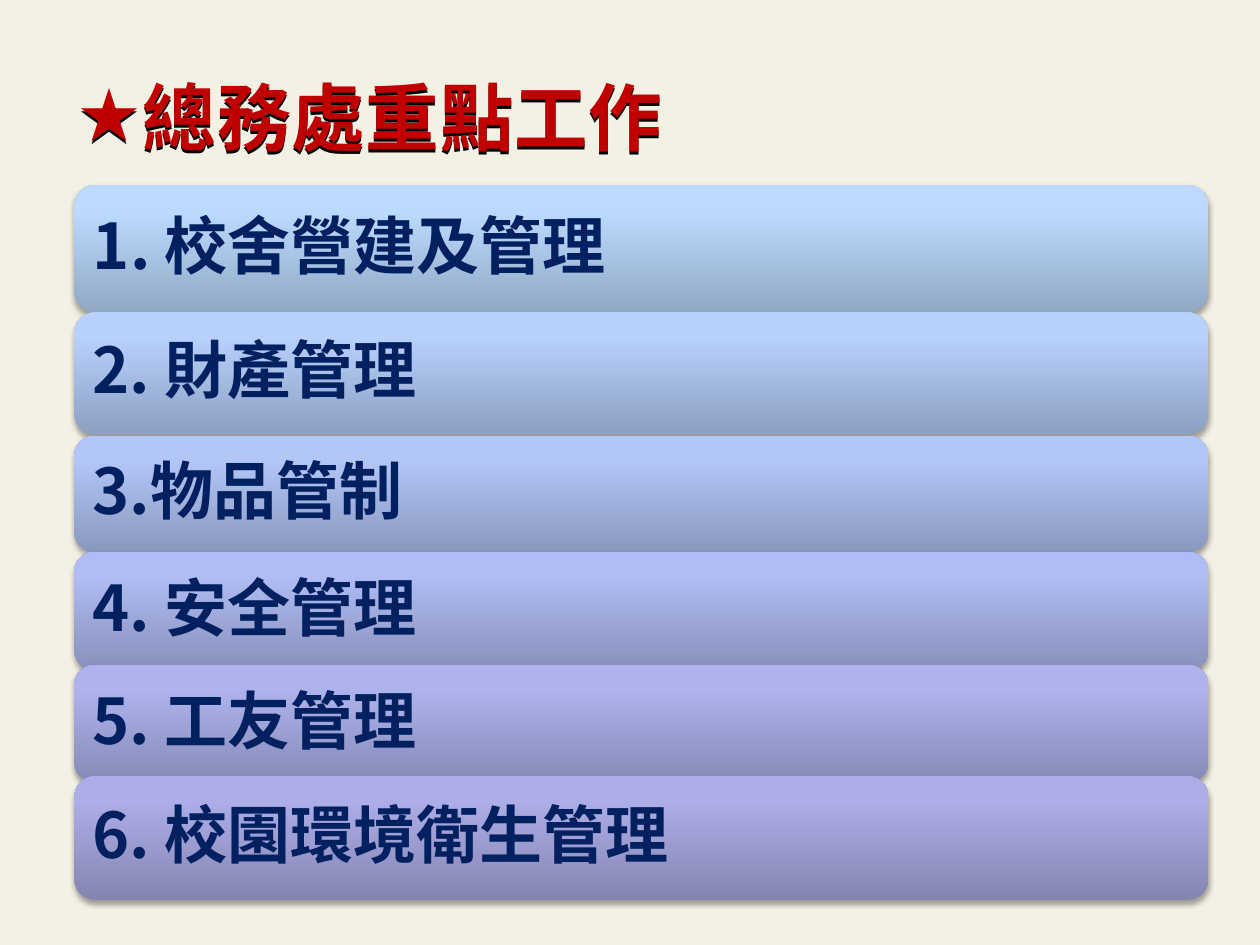
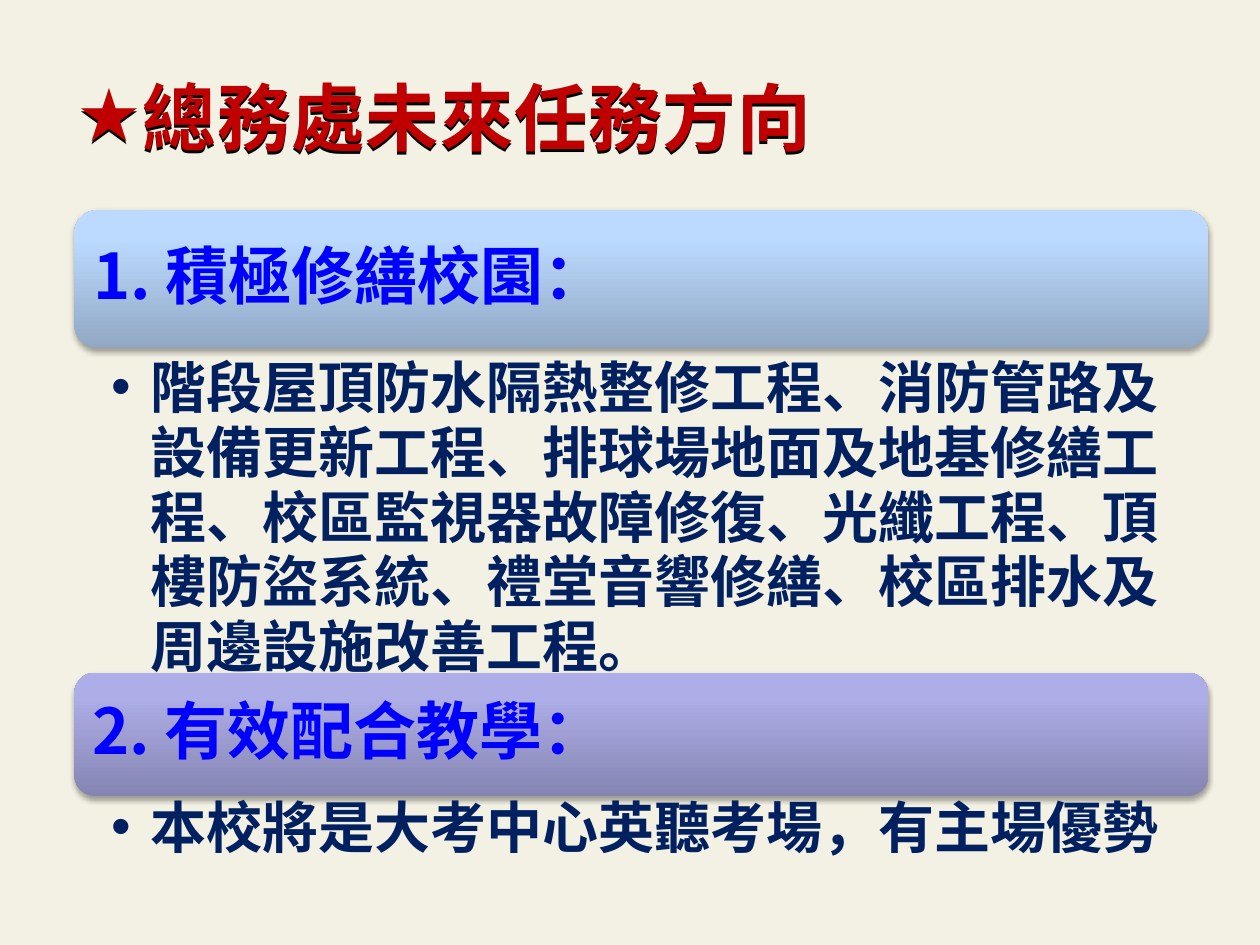
from copy import deepcopy

from lxml import etree
from pptx import Presentation
from pptx.dml.color import RGBColor
from pptx.enum.shapes import MSO_SHAPE
from pptx.enum.text import MSO_ANCHOR, MSO_AUTO_SIZE
from pptx.oxml.ns import qn
from pptx.util import Cm, Pt

ROUNDED = MSO_SHAPE.ROUNDED_RECTANGLE
MIDDLE = MSO_ANCHOR.MIDDLE
GROW = MSO_AUTO_SIZE.SHAPE_TO_FIT_TEXT

FONT = "Noto Sans CJK SC"
COLORS = {
    "background": "F3F1E4",
    "title": "C00000",
    "navy": "002060",
    "blue": "0000FF",
    "shadow": "000000",
}
BAR_GRADIENTS = [
    ("91A8C4", "BCDAFF", "BEDBFF"),
    ("8DA0C2", "B7D0FC", "B6D0FF"),
    ("8A98BF", "B3C6F8", "B2C6FB"),
    ("8791BB", "B0BCF3", "AFBCF6"),
    ("868AB7", "AEB3ED", "ADB3F0"),
    ("8585B2", "ADADE7", "ACACE9"),
]
GRADIENT_POSITIONS = (0, 0.8, 1)
LEFT, WIDTH = Cm(1.5), Cm(22.86)

KEY_TASKS = [
    ("1. 校舍營建及管理", 3.73, 2.57),
    ("2. 財產管理", 6.3, 2.46),
    ("3.物品管制", 8.79, 2.34),
    ("4. 安全管理", 11.13, 2.39),
    ("5. 工友管理", 13.41, 2.36),
    ("6. 校園環境衛生管理", 15.65, 2.49),
]
REPAIRS = (
    "階段屋頂防水隔熱整修工程、消防管路及設備更新工程、排球場地面及地基修繕工程、"
    "校區監視器故障修復、光纖工程、頂樓防盜系統、禮堂音響修繕、"
    "校區排水及周邊設施改善工程。"
)
TEACHING = "本校將是大考中心英聽考場，有主場優勢"


class Deck:
    def __init__(self):
        self.presentation = Presentation()
        self.presentation.slide_width = Cm(25.4)
        self.presentation.slide_height = Cm(19.05)
        self.slide = None

    def add_slide(self, title, title_width):
        layout = self.presentation.slide_layouts[6]
        self.slide = self.presentation.slides.add_slide(layout)
        fill = self.slide.background.fill
        fill.solid()
        fill.fore_color.rgb = RGBColor.from_string(COLORS["background"])
        self.title(title, title_width)

    def run(self, paragraph, text, size, color):
        run = paragraph.add_run()
        run.text = text
        run.font.size = Pt(size)
        run.font.bold = True
        run.font.color.rgb = RGBColor.from_string(COLORS[color])
        run.font.name = FONT
        properties = run.font._element
        etree.SubElement(properties, qn("a:ea"), typeface=FONT)
        return properties

    def bullet(self, paragraph, character, indent=0):
        properties = paragraph._p.get_or_add_pPr()
        properties.set("marL", str(Cm(indent)))
        properties.set("indent", str(-Cm(indent)))
        etree.SubElement(properties, qn("a:buFont"), typeface="Arial")
        etree.SubElement(properties, qn("a:buChar"), char=character)

    def shadow(self, shape, blur, distance, opacity):
        shape.shadow.inherit = False
        effects = shape._element.spPr.find(qn("a:effectLst"))
        outer = etree.SubElement(
            effects, qn("a:outerShdw"), blurRad=str(Pt(blur)),
            dist=str(Pt(distance)), dir="5400000", rotWithShape="0")
        color = etree.SubElement(outer, qn("a:srgbClr"), val=COLORS["shadow"])
        etree.SubElement(color, qn("a:alpha"), val=str(opacity * 1000))

    def title(self, text, width):
        box = self.slide.shapes.add_textbox(Cm(1.3), Cm(1.32), Cm(width), Cm(2.06))
        box.text_frame.word_wrap = False
        box.text_frame.auto_size = GROW
        self.shadow(box, 0, 1.8, 100)
        paragraph = box.text_frame.paragraphs[0]
        self.bullet(paragraph, "★")
        self.run(paragraph, text, 42, "title").set("spc", "50")

    def bar(self, text, top, height, gradient, color, line_spacing=0.9, space_after=12.6):
        shape = self.slide.shapes.add_shape(ROUNDED, LEFT, Cm(top), WIDTH, Cm(height))
        shape.line.fill.background()
        shape.fill.gradient()
        shape.fill.gradient_angle = 90
        stop_list = next(shape._element.iter(qn("a:gsLst")))
        stop_list.append(deepcopy(stop_list[-1]))
        for stop, position, value in zip(
                shape.fill.gradient_stops, GRADIENT_POSITIONS, gradient):
            stop.position = position
            stop.color.rgb = RGBColor.from_string(value)
        self.shadow(shape, 3.1, 1.8, 35)
        frame = shape.text_frame
        frame.word_wrap = True
        frame.vertical_anchor = MIDDLE
        paragraph = frame.paragraphs[0]
        paragraph.line_spacing = line_spacing
        paragraph.space_after = Pt(space_after)
        paragraph._p.get_or_add_pPr().set("algn", "l")
        self.run(paragraph, text, 36, color)

    def detail(self, text, top, height):
        box = self.slide.shapes.add_textbox(LEFT, Cm(top), WIDTH, Cm(height))
        frame = box.text_frame
        frame.word_wrap = True
        frame.margin_left, frame.margin_right = Cm(0.74), Cm(0.64)
        frame.margin_top = frame.margin_bottom = Cm(0.1)
        paragraph = frame.paragraphs[0]
        self.bullet(paragraph, "•", 0.79)
        paragraph.line_spacing = Pt(37)
        paragraph.space_after = Pt(5)
        self.run(paragraph, text, 32, "navy")


def main():
    deck = Deck()

    deck.add_slide("總務處重點工作", 12.45)
    for (task, top, height), gradient in zip(KEY_TASKS, BAR_GRADIENTS):
        deck.bar(task, top, height, gradient, "navy")

    deck.add_slide("總務處未來任務方向", 15.47)
    deck.bar("1. 積極修繕校園：", 4.24, 2.77, BAR_GRADIENTS[0], "blue")
    deck.detail(REPAIRS, 7.06, 7.75)
    deck.bar("2. 有效配合教學：", 13.56, 2.49, BAR_GRADIENTS[-1], "blue", Pt(37), 5)
    deck.detail(TEACHING, 15.93, 1.27)

    deck.presentation.save("out.pptx")


if __name__ == "__main__":
    main()
